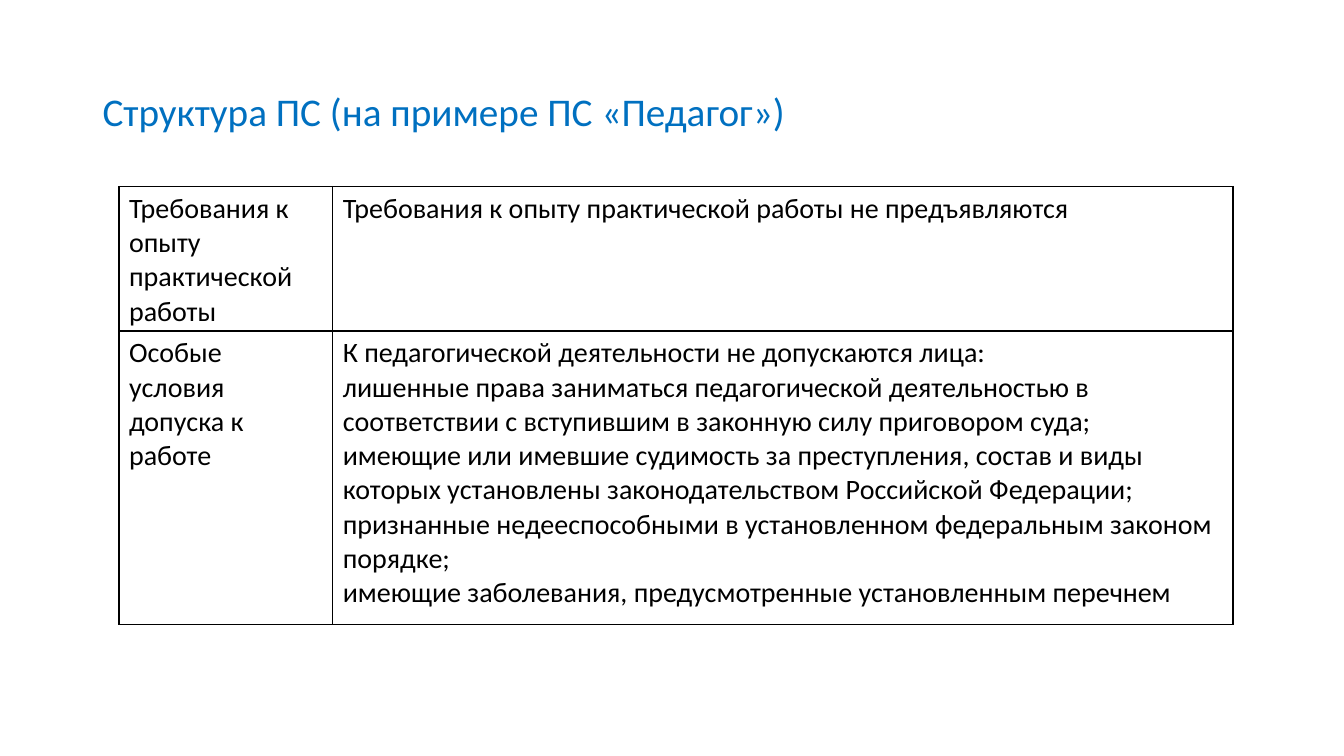
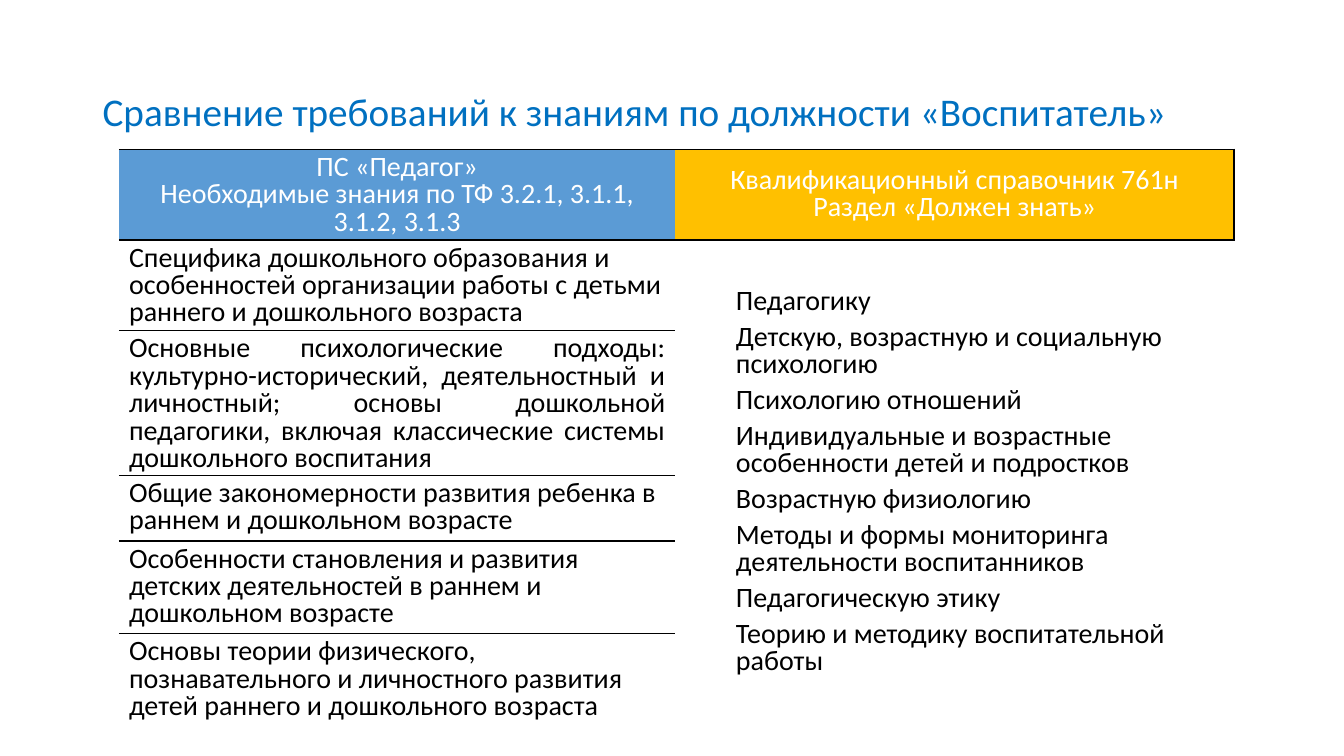
from dataclasses import dataclass

from lxml import etree
from pptx import Presentation
from pptx.dml.color import RGBColor
from pptx.enum.text import MSO_ANCHOR, PP_ALIGN
from pptx.oxml.ns import qn
from pptx.util import Inches, Pt

LEFT, CENTER, JUSTIFY = PP_ALIGN.LEFT, PP_ALIGN.CENTER, PP_ALIGN.JUSTIFY
TOP, MIDDLE = MSO_ANCHOR.TOP, MSO_ANCHOR.MIDDLE


@dataclass(frozen=True)
class Theme:
    """Colours, font and type sizes of the deck."""
    font: str = "Calibri"
    title: str = "0070C0"
    ink: str = "000000"
    paper: str = "FFFFFF"
    blue: str = "5B9BD5"
    gold: str = "FFC000"
    head: int = 28
    body: int = 20
    rule: int = 1


THEME = Theme()
TITLE_BOX = (0.92, 0.4, 11.5, 1.45)

NEEDS = [
    (["Требования к опыту практической работы"],
     ["Требования к опыту практической работы не предъявляются"]),
    (["Особые условия допуска к работе"],
     ["К педагогической деятельности не допускаются лица:",
      "лишенные права заниматься педагогической деятельностью в соответствии "
      "с вступившим в законную силу приговором суда;",
      "имеющие или имевшие судимость за преступления, состав и виды которых "
      "установлены законодательством Российской Федерации;",
      "признанные недееспособными в установленном федеральным законом порядке;",
      "имеющие заболевания, предусмотренные установленным перечнем"]),
]

LEFT_HEAD = ["ПС «Педагог»", "Необходимые знания по ТФ 3.2.1, 3.1.1, 3.1.2, 3.1.3"]
RIGHT_HEAD = ["Квалификационный справочник 761н", "Раздел «Должен знать»"]
SKILLS = [
    ("Специфика дошкольного образования и особенностей организации работы "
     "с детьми раннего и дошкольного возраста", LEFT),
    ("Основные психологические подходы: культурно-исторический, деятельностный "
     "и личностный; основы дошкольной педагогики, включая классические системы "
     "дошкольного воспитания", JUSTIFY),
    ("Общие закономерности развития ребенка в раннем и дошкольном возрасте", LEFT),
    ("Особенности становления и развития детских деятельностей в раннем "
     "и дошкольном возрасте", LEFT),
    ("Основы теории физического, познавательного и личностного развития "
     "детей раннего и дошкольного возраста", LEFT),
]
TOPICS = [
    "Педагогику",
    "Детскую, возрастную и социальную психологию",
    "Психологию отношений",
    "Индивидуальные и возрастные особенности детей и подростков",
    "Возрастную физиологию",
    "Методы и формы мониторинга деятельности воспитанников",
    "Педагогическую этику",
    "Теорию и методику воспитательной работы",
]


def write(frame, lines, size, color, align=LEFT, space=1.0):
    """Fill a text frame with evenly styled paragraphs."""
    frame.text = "\n".join(lines)
    for para in frame.paragraphs:
        para.alignment = align
        para.line_spacing = space
        for run in para.runs:
            run.font.name = THEME.font
            run.font.size = Pt(size)
            run.font.color.rgb = RGBColor.from_string(color)


def paint(cell, fill, sides):
    """Draw the named borders (of LRTB) and the fill of a cell."""
    props = cell._tc.get_or_add_tcPr()
    for side in "LRTB":
        line = etree.SubElement(props, qn(f"a:ln{side}"), w=str(Pt(THEME.rule)))
        if side in sides:
            solid = etree.SubElement(line, qn("a:solidFill"))
            etree.SubElement(solid, qn("a:srgbClr"), val=THEME.ink)
        else:
            etree.SubElement(line, qn("a:noFill"))
    cell.fill.solid()
    cell.fill.fore_color.rgb = RGBColor.from_string(fill)


def put(cell, lines, fill=THEME.paper, sides="LRTB", color=THEME.ink,
        align=LEFT, space=1.0, anchor=TOP):
    """Set the text and look of one table cell."""
    write(cell.text_frame, lines, THEME.body, color, align, space)
    cell.vertical_anchor = anchor
    paint(cell, fill, sides)


def grid(slide, left, top, cols, rows):
    """Add a plain table with the given column widths and row heights."""
    frame = slide.shapes.add_table(
        len(rows), len(cols), Inches(left), Inches(top),
        Inches(sum(cols)), Inches(sum(rows)))
    table = frame.table
    table.first_row = table.horz_banding = False
    for col, width in zip(table.columns, cols):
        col.width = Inches(width)
    for row, height in zip(table.rows, rows):
        row.height = Inches(height)
    return table


def page(deck, title):
    """Add a blank slide with the shared title."""
    slide = deck.slides.add_slide(deck.slide_layouts[6])
    box = slide.shapes.add_textbox(*map(Inches, TITLE_BOX))
    frame = box.text_frame
    frame.word_wrap = True
    frame.vertical_anchor = MIDDLE
    write(frame, [title], THEME.head, THEME.title, space=0.9)
    return slide


def needs(slide, left, top):
    """Build the framed table of requirements."""
    table = grid(slide, left, top, [2.12, 8.93], [1.35, 2.91])
    for row, texts in enumerate(NEEDS):
        for col, lines in enumerate(texts):
            put(table.cell(row, col), lines)


def topics(table):
    """Build the merged, indented list in the right column."""
    last = len(SKILLS)
    cell = table.cell(1, 1)
    cell.merge(table.cell(last, 1))
    put(cell, TOPICS, sides="T", space=0.8, anchor=MIDDLE)
    for para in cell.text_frame.paragraphs:
        para.level = 1
        para.space_before = Pt(6)
        props = para._p.get_or_add_pPr()
        props.set("marL", str(Inches(0.5)))
        props.set("indent", "0")
    for row in range(2, last + 1):
        paint(table.cell(row, 1), THEME.paper, "")


def compare(slide, left, top):
    """Build the two-column comparison of knowledge."""
    table = grid(slide, left, top, [5.52, 5.54],
                 [0.44, 0.88, 1.39, 0.65, 0.92, 0.88])
    heads = [(LEFT_HEAD, THEME.blue, "TB", TOP),
             (RIGHT_HEAD, THEME.gold, "TRB", MIDDLE)]
    for col, (lines, fill, sides, anchor) in enumerate(heads):
        put(table.cell(0, col), lines, fill, sides, THEME.paper,
            CENTER, 0.8, anchor)
    for row, (text, align) in enumerate(SKILLS, 1):
        sides = "T" if row == len(SKILLS) else "TB"
        put(table.cell(row, 0), [text], sides=sides, align=align, space=0.8)
    topics(table)


def main():
    """Build and save the deck."""
    deck = Presentation()
    deck.slide_width, deck.slide_height = Inches(13.33), Inches(7.5)
    needs(page(deck, "Структура ПС (на примере ПС «Педагог»)"), 1.18, 1.85)
    compare(page(deck, "Сравнение требований к знаниям по должности «Воспитатель»"),
            1.18, 1.48)
    deck.save("out.pptx")


if __name__ == "__main__":
    main()
